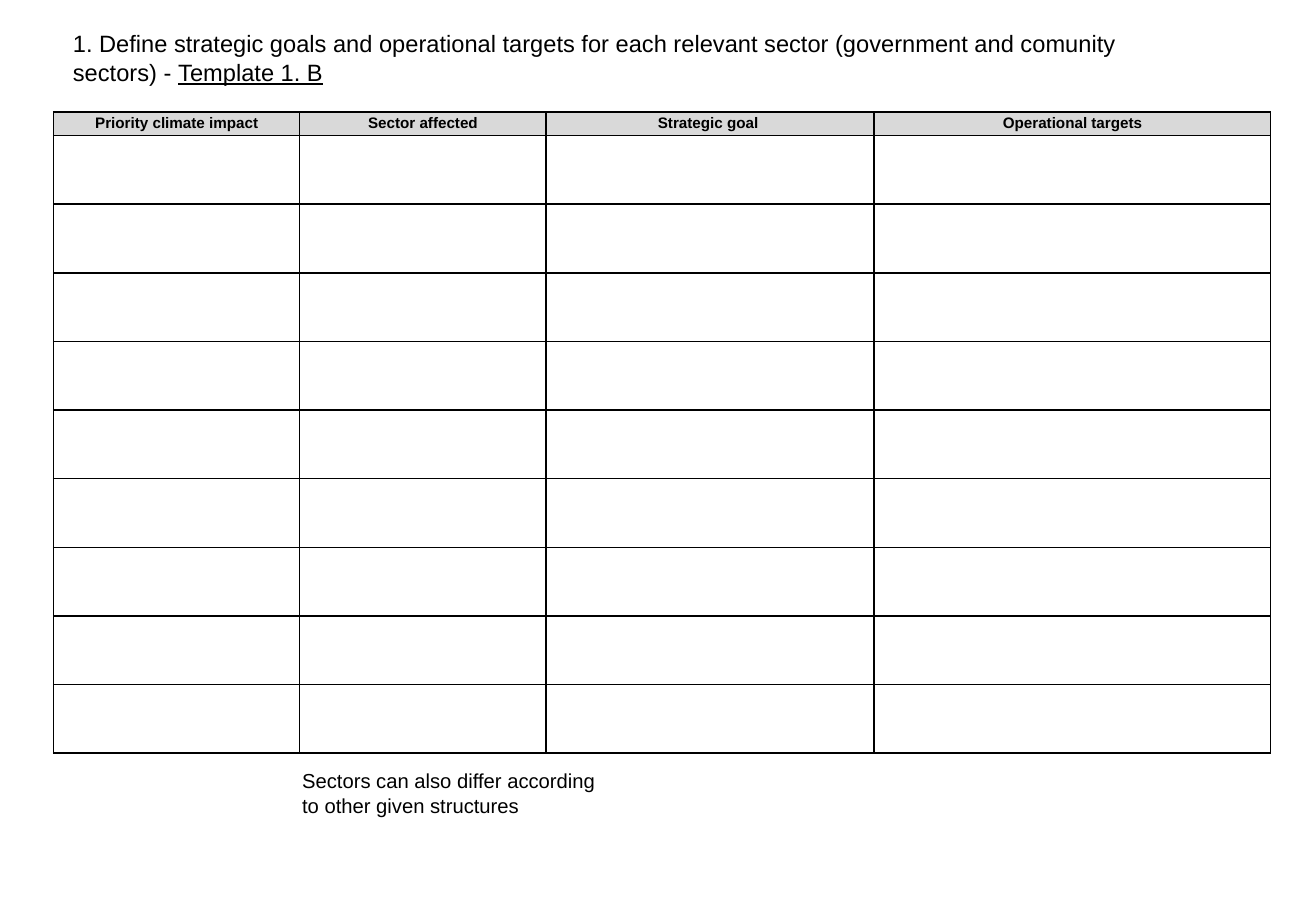
from lxml.etree import SubElement
from pptx import Presentation
from pptx.dml.color import RGBColor
from pptx.enum.text import MSO_ANCHOR as Anchor, MSO_AUTO_SIZE as AutoSize, PP_ALIGN as Align
from pptx.oxml.ns import qn
from pptx.util import Pt

BLACK = "000000"
HEADER_GREY = "D9D9D9"
TITLE_ONLY = 5
HEADERS = ["Priority climate impact", "Sector affected", "Strategic goal ", "Operational targets"]
COLUMN_WIDTHS = [146, 146, 194.5, 235]
HEADER_HEIGHT, ROW_HEIGHT, EMPTY_ROWS = 14, 40.7, 9


def color(value):
    """Turn a hex string into a colour."""
    return RGBColor.from_string(value)


def format_runs(paragraph, size, bold=False):
    """Give every run of a paragraph the slide's font."""
    for run in paragraph.runs:
        run.font.name = "Arial"
        run.font.size = Pt(size)
        run.font.bold = bold
        run.font.color.rgb = color(BLACK)


def add_borders(cell):
    """Draw a thin line on all four sides of a cell."""
    properties = cell._tc.get_or_add_tcPr()
    for side in ("a:lnL", "a:lnR", "a:lnT", "a:lnB"):
        line = SubElement(properties, qn(side), w=str(Pt(1)))
        fill = SubElement(line, qn("a:solidFill"))
        SubElement(fill, qn("a:srgbClr"), val=BLACK)


def add_title(slide, text, underlined):
    """Fill the title placeholder, ending with an underlined part."""
    title = slide.shapes.title
    title.left, title.top, title.width, title.height = Pt(36), Pt(13.7), Pt(683), Pt(41)
    frame = title.text_frame
    frame.text = text
    frame.word_wrap = True
    frame.auto_size = AutoSize.NONE
    frame.vertical_anchor = Anchor.TOP
    paragraph = frame.paragraphs[0]
    paragraph.alignment = Align.LEFT
    template_name = paragraph.add_run()
    template_name.text = underlined
    template_name.font.underline = True
    format_runs(paragraph, 14)


def add_header(cell, text):
    """Write one grey column heading."""
    cell.margin_left = cell.margin_right = Pt(4.5)
    cell.margin_top = cell.margin_bottom = Pt(0)
    cell.fill.solid()
    cell.fill.fore_color.rgb = color(HEADER_GREY)
    cell.text_frame.text = text
    paragraph = cell.text_frame.paragraphs[0]
    paragraph.alignment = Align.CENTER
    paragraph.line_spacing = 1.15
    paragraph.space_after = Pt(10)
    format_runs(paragraph, 9, bold=True)


def add_goals_table(slide):
    """Add the blank form with its column headings."""
    heights = [HEADER_HEIGHT] + [ROW_HEIGHT] * EMPTY_ROWS
    table = slide.shapes.add_table(
        len(heights), len(HEADERS), Pt(31.7), Pt(66.4), Pt(sum(COLUMN_WIDTHS)), Pt(sum(heights))
    ).table
    for column, width in zip(table.columns, COLUMN_WIDTHS):
        column.width = Pt(width)
    for row, height in zip(table.rows, heights):
        row.height = Pt(height)
    for cell in table.iter_cells():
        add_borders(cell)
        cell.fill.background()
    for cell, text in zip(table.rows[0].cells, HEADERS):
        add_header(cell, text)


def add_note(slide, text):
    """Add the remark below the table."""
    frame = slide.shapes.add_textbox(Pt(172), Pt(452), Pt(194), Pt(36)).text_frame
    frame.word_wrap = True
    frame.text = text
    format_runs(frame.paragraphs[0], 12)


def main():
    """Build and save the slide."""
    presentation = Presentation()
    presentation.slide_width, presentation.slide_height = Pt(780), Pt(540)
    slide = presentation.slides.add_slide(presentation.slide_layouts[TITLE_ONLY])
    add_goals_table(slide)
    add_title(
        slide,
        "1. Define strategic goals and operational targets for each relevant sector "
        "(government and comunity sectors) - ",
        "Template 1. B",
    )
    add_note(slide, "Sectors can also differ according to other given structures")
    presentation.save("out.pptx")


if __name__ == "__main__":
    main()
